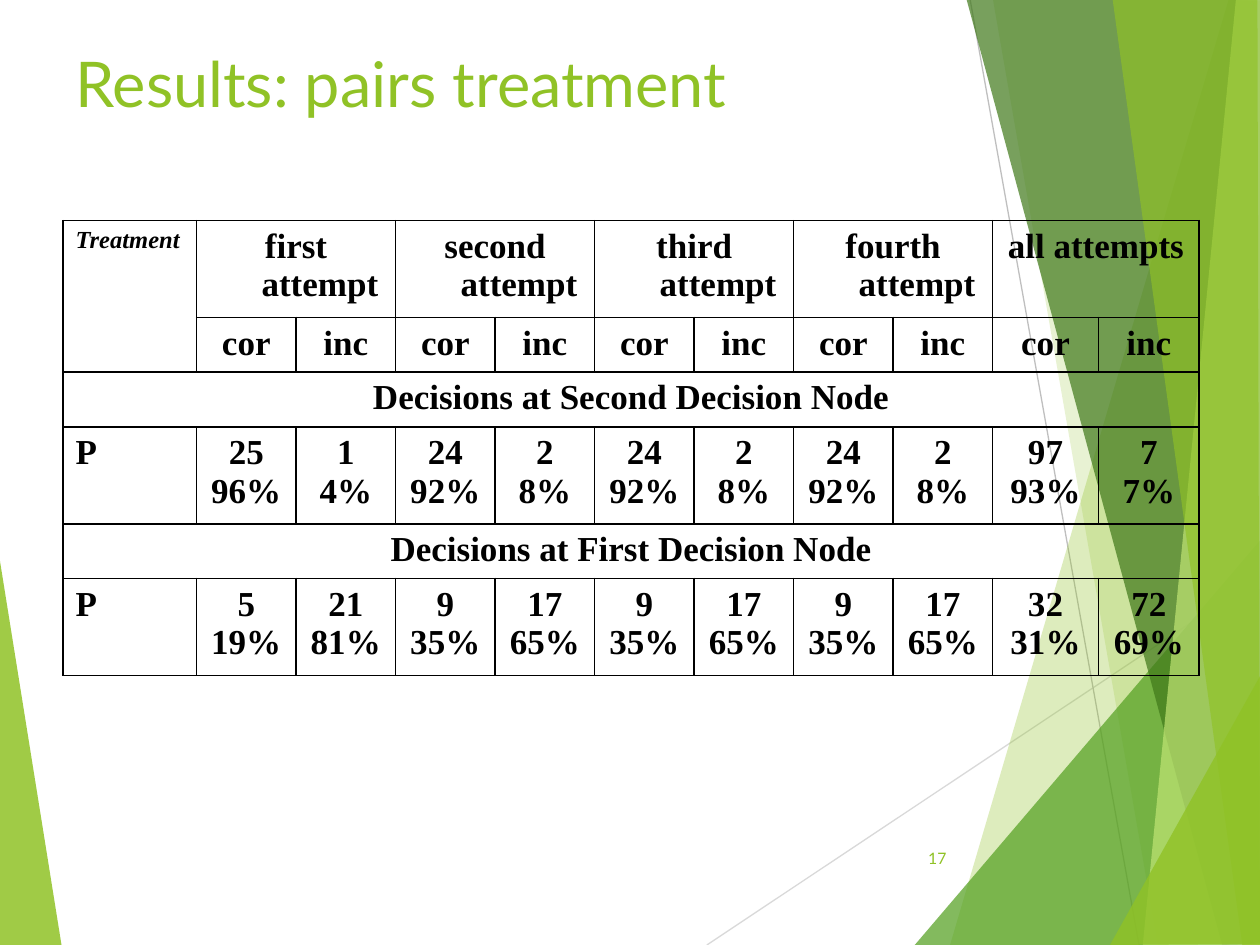
from lxml.etree import SubElement
from pptx import Presentation
from pptx.dml.color import RGBColor
from pptx.enum.shapes import MSO_CONNECTOR
from pptx.enum.text import MSO_ANCHOR, PP_ALIGN
from pptx.oxml import parse_xml
from pptx.oxml.ns import nsdecls, qn
from pptx.util import Inches, Pt

LIME = RGBColor(0x90, 0xC2, 0x26)
GREEN = RGBColor(0x54, 0xA0, 0x21)
DARK = RGBColor(0x3F, 0x78, 0x19)
PALE = RGBColor(0xC0, 0xE4, 0x74)
GRAY = RGBColor(0xBF, 0xBF, 0xBF)
LIGHT_GRAY = RGBColor(0xD9, 0xD9, 0xD9)
BLACK = RGBColor(0, 0, 0)


def write(tf, text, font="Times New Roman", size=20, color=BLACK, bold=True,
          italic=False, align=PP_ALIGN.CENTER, hanging=0):
    """Write one paragraph per line of text."""
    tf.word_wrap = True
    for i, line in enumerate(text.split("\n")):
        p = tf.add_paragraph() if i else tf.paragraphs[0]
        p.alignment = align
        if hanging:
            pPr = p._p.get_or_add_pPr()
            pPr.set("marL", str(Inches(hanging)))
            pPr.set("indent", str(-Inches(hanging)))
        r = p.add_run()
        r.text = line
        r.font.name, r.font.size = font, Pt(size)
        r.font.bold, r.font.italic = bold, italic
        r.font.color.rgb = color


prs = Presentation()
prs.slide_width, prs.slide_height = Inches(10), Inches(7.5)
s = prs.slides.add_slide(prs.slide_layouts[6])

# Thin background lines
for x1, y1, x2, y2, color in [(5.61, 7.5, 10.01, 4.57, LIGHT_GRAY),
                              (7.7, 0, 9.04, 7.5, GRAY)]:
    line = s.shapes.add_connector(MSO_CONNECTOR.STRAIGHT, Inches(x1), Inches(y1),
                                  Inches(x2), Inches(y2))
    line.line.color.rgb, line.line.width = color, Pt(0.75)
    SubElement(line._element.spPr, qn("a:effectLst"))

# Translucent facets: color, opacity in percent, corners
facets = [
    (LIME, 85, [(-0.01, 4.39), (0.49, 7.51), (-0.01, 7.5)]),
    (LIME, 30, [(9.75, 0), (7.54, 7.5), (10.02, 7.51), (10.01, 0.01)]),
    (LIME, 20, [(7.88, -0.01), (9.19, 7.5), (10.01, 7.5), (10.01, -0.01)]),
    (GREEN, 72, [(7.26, 7.5), (10, 4.29), (10.01, 7.5)]),
    (DARK, 70, [(7.67, -0.01), (9.7, 7.5), (10.01, 7.49), (10.01, -0.01)]),
    (PALE, 70, [(9.81, -0.01), (9.07, 7.5), (10.01, 7.5), (10, -0.01)]),
    (LIME, 65, [(8.83, -0.01), (9.86, 7.5), (10, 7.5), (9.98, -0.01)]),
    (LIME, 80, [(8.81, 7.5), (10.01, 5.35), (10.01, 7.49)]),
]
for color, opacity, corners in facets:
    start, *rest = [(Inches(x), Inches(y)) for x, y in corners]
    builder = s.shapes.build_freeform(*start)
    builder.add_line_segments(rest, close=True)
    sp = builder.convert_to_shape()
    sp.shadow.inherit = False
    sp.line.fill.background()
    sp.fill.solid()
    sp.fill.fore_color.rgb = color
    clr = sp._element.spPr.find(qn("a:solidFill")).find(qn("a:srgbClr"))
    SubElement(clr, qn("a:alpha"), val=str(opacity * 1000))

# Title
title = s.shapes.add_textbox(Inches(0.5), Inches(0.3), Inches(9), Inches(1.25))
write(title.text_frame, "Results: pairs treatment", font="Lato", size=36,
      color=LIME, bold=False, align=PP_ALIGN.LEFT)

# Results table
col_widths = [1.06] + [0.79] * 8 + [0.84, 0.8]
row_heights = [0.77, 0.43, 0.43, 0.77, 0.43, 0.77]
table = s.shapes.add_table(len(row_heights), len(col_widths), Inches(0.5),
                           Inches(1.75), Inches(9), Inches(3.6)).table
table.first_row = table.horz_banding = False
for col, width in zip(table.columns, col_widths):
    col.width = Inches(width)
for row, height in zip(table.rows, row_heights):
    row.height = Inches(height)

# Clear cell fills and black grid
for cell in table.iter_cells():
    cell.fill.background()
    tcPr = cell._tc.get_or_add_tcPr()
    for i, side in enumerate("LRTB"):
        tcPr.insert(i, parse_xml(
            f'<a:ln{side} {nsdecls("a")} w="{Pt(1)}"><a:solidFill>'
            f'<a:srgbClr val="{BLACK}"/></a:solidFill></a:ln{side}>'))

# Headings
table.cell(0, 0).merge(table.cell(1, 0))
write(table.cell(0, 0).text_frame, "Treatment", size=14, italic=True,
      align=PP_ALIGN.JUSTIFY, hanging=0.38)
headings = ["first attempt", "second attempt", "third attempt",
            "fourth attempt", "all attempts"]
for c, heading in zip(range(1, 11, 2), headings):
    table.cell(0, c).merge(table.cell(0, c + 1))
    write(table.cell(0, c).text_frame, heading, hanging=0.38)
    write(table.cell(1, c).text_frame, "cor", hanging=0.38)
    write(table.cell(1, c + 1).text_frame, "inc", hanging=0.38)

# One banner row and one data row per decision node
nodes = [
    ("Second", [25, 1, 24, 2, 24, 2, 24, 2, 97, 7],
     [96, 4, 92, 8, 92, 8, 92, 8, 93, 7]),
    ("First", [5, 21, 9, 17, 9, 17, 9, 17, 32, 72],
     [19, 81, 35, 65, 35, 65, 35, 65, 31, 69]),
]
for row, (node, counts, shares) in zip((2, 4), nodes):
    table.cell(row, 0).merge(table.cell(row, 10))
    write(table.cell(row, 0).text_frame, f"Decisions at {node} Decision Node",
          hanging=0.38)
    write(table.cell(row + 1, 0).text_frame, "P", align=PP_ALIGN.JUSTIFY,
          hanging=0.38)
    for c, (count, share) in enumerate(zip(counts, shares), 1):
        write(table.cell(row + 1, c).text_frame, f"{count}\n{share}%", hanging=0.38)

# Slide number
number = s.shapes.add_textbox(Inches(7.05), Inches(6.61), Inches(0.56), Inches(0.4))
number.text_frame.vertical_anchor = MSO_ANCHOR.MIDDLE
write(number.text_frame, "17", font="Lato", size=9, color=LIME, bold=False,
      align=PP_ALIGN.RIGHT)

prs.save("out.pptx")
